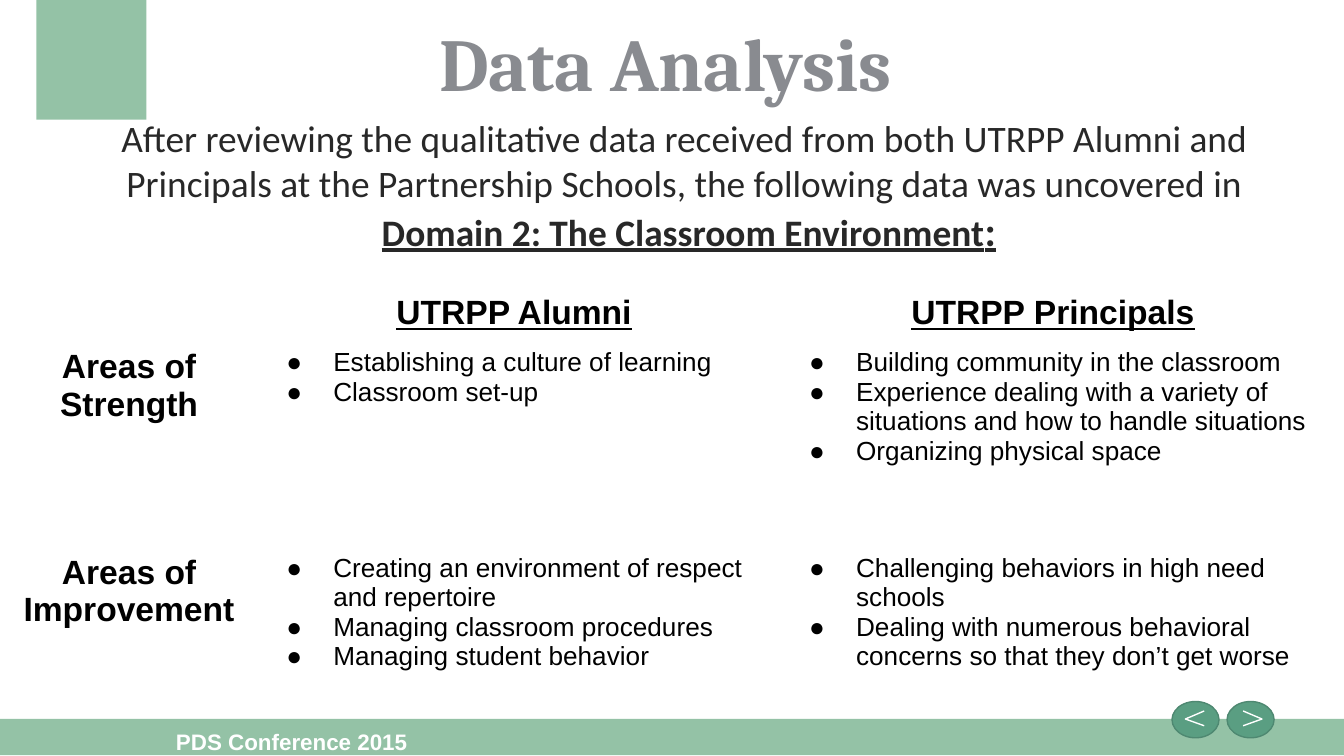
from lxml import etree
from pptx import Presentation
from pptx.dml.color import RGBColor
from pptx.enum.shapes import MSO_SHAPE
from pptx.enum.text import MSO_ANCHOR, MSO_AUTO_SIZE, PP_ALIGN
from pptx.oxml.ns import qn
from pptx.util import Inches, Pt

CENTER, LEFT = PP_ALIGN.CENTER, PP_ALIGN.LEFT
RECTANGLE, OVAL = MSO_SHAPE.RECTANGLE, MSO_SHAPE.OVAL
COLORS = {
    "band": "94C2A6", "button": "5A9E82", "button_edge": "4E8871",
    "white": "FFFFFF", "title": "898B90", "intro": "282828", "black": "000000",
}


def write(paragraph, text, size=18, font="Arial", color="black", bold=False,
          underline=False, align=LEFT, indent=None, bullet=None):
    """Add a run; indent is (left margin, first line) in inches."""
    paragraph.alignment = align
    paragraph.space_before = Pt(0)
    if indent:
        props = paragraph._p.get_or_add_pPr()
        props.set("marL", str(Inches(indent[0])))
        props.set("indent", str(Inches(indent[1])))
        if bullet:
            etree.SubElement(props, qn("a:buFont")).set("typeface", "Arial")
            etree.SubElement(props, qn("a:buChar")).set("char", bullet)
        elif props.find(qn("a:buNone")) is None:
            etree.SubElement(props, qn("a:buNone"))
    run = paragraph.add_run()
    run.text = text
    run.font.size, run.font.name = Pt(size), font
    run.font.bold, run.font.underline = bold, underline
    run.font.color.rgb = RGBColor.from_string(COLORS[color])


def add_plain(kind, left, top, width, height, fill, edge=None):
    shape = slide.shapes.add_shape(
        kind, Inches(left), Inches(top), Inches(width), Inches(height))
    shape.shadow.inherit = False
    shape.fill.solid()
    shape.fill.fore_color.rgb = RGBColor.from_string(COLORS[fill])
    if edge:
        shape.line.color.rgb = RGBColor.from_string(COLORS[edge])
        shape.line.width = Pt(0.75)
    else:
        shape.line.fill.background()


prs = Presentation()
prs.slide_width, prs.slide_height = Inches(10), Inches(10) * 9 // 16
slide = prs.slides.add_slide(prs.slide_layouts[1])

# Green corner, footer band and navigation buttons
add_plain(RECTANGLE, 0.27, 0, 0.82, 0.89, "band")
add_plain(RECTANGLE, 0, 5.35, 10, 0.27, "band")
footer = slide.shapes.add_textbox(
    Inches(1.31), Inches(5.42), Inches(3.27), Inches(0.4)).text_frame
footer.word_wrap = True
footer.margin_left = footer.margin_right = footer.margin_top = footer.margin_bottom = 0
write(footer.paragraphs[0], "PDS Conference 2015", size=12, color="white", bold=True)

for left, direction in ((8.72, -1), (9.13, 1)):
    add_plain(OVAL, left, 5.22, 0.35, 0.27, "button", "button_edge")
    middle = left + 0.18
    tip, back = Inches(middle + 0.08 * direction), Inches(middle - 0.06 * direction)
    builder = slide.shapes.build_freeform(back, Inches(5.29))
    builder.add_line_segments([(tip, Inches(5.35)), (back, Inches(5.4))], close=False)
    chevron = builder.convert_to_shape()
    chevron.shadow.inherit = False
    chevron.fill.background()
    chevron.line.color.rgb = RGBColor.from_string(COLORS["white"])
    chevron.line.width = Pt(0.75)

# Title and introduction
title, intro = slide.shapes.title, slide.placeholders[1]
for holder, top, width, height, anchor in (
        (title, 0, 9.9, 0.89, MSO_ANCHOR.BOTTOM),
        (intro, 0.76, 10.12, 4.73, MSO_ANCHOR.TOP)):
    holder.left, holder.top = Inches(0), Inches(top)
    holder.width, holder.height = Inches(width), Inches(height)
    frame = holder.text_frame
    frame.auto_size, frame.word_wrap = MSO_AUTO_SIZE.NONE, True
    frame.vertical_anchor = anchor
    frame.margin_left = frame.margin_right = Inches(0.1)
    frame.margin_top = frame.margin_bottom = Inches(0.1)

write(title.text_frame.paragraphs[0], "Data Analysis", size=40, font="Cambria",
      color="title", bold=True, align=CENTER)

intro_format = dict(font="Calibri", color="intro", align=CENTER, indent=(0.38, -0.25))
opening, continuation, domain = (
    intro.text_frame.paragraphs[0],
    intro.text_frame.add_paragraph(), intro.text_frame.add_paragraph())
write(opening, "After reviewing the qualitative data received from both UTRPP Alumni and ",
      size=20, **intro_format)
write(continuation,
      "Principals at the Partnership Schools, the following data was uncovered in ",
      size=20, **intro_format)
for text, size in (("Domain 2: The Classroom Environment", 20), (":", 22)):
    write(domain, text, size=size, bold=True, underline=True, **intro_format)

# Findings: strings are headings, lists are bulleted
findings = [
    ["", "UTRPP Alumni", "UTRPP Principals"],
    ["Areas of Strength",
     ["Establishing a culture of learning", "Classroom set-up"],
     ["Building community in the classroom",
      "Experience dealing with a variety of situations and how to handle situations",
      "Organizing physical space"]],
    ["Areas of Improvement",
     ["Creating an environment of respect and repertoire",
      "Managing classroom procedures", "Managing student behavior"],
     ["Challenging behaviors in high need schools",
      "Dealing with numerous behavioral concerns so that they don’t get worse"]],
]
table = slide.shapes.add_table(
    3, 3, Inches(0.04), Inches(2.14), Inches(9.86), Inches(3.19)).table
table.first_row = table.horz_banding = False
for column, width in zip(table.columns, (1.84, 3.89, 4.13)):
    column.width = Inches(width)
for row, height in zip(table.rows, (0.31, 1.53, 1.35)):
    row.height = Inches(height)

for r, row_content in enumerate(findings):
    for c, content in enumerate(row_content):
        cell = table.cell(r, c)
        cell.margin_left = cell.margin_right = Inches(0.1)
        cell.margin_top = cell.margin_bottom = Inches(0.05 if content else 0)
        cell_props = cell._tc.get_or_add_tcPr()
        for side in ("a:lnL", "a:lnR", "a:lnT", "a:lnB"):
            etree.SubElement(etree.SubElement(cell_props, qn(side)), qn("a:noFill"))
        cell.fill.background()
        first = cell.text_frame.paragraphs[0]
        if isinstance(content, list):
            for i, point in enumerate(content):
                paragraph = cell.text_frame.add_paragraph() if i else first
                write(paragraph, point, size=14, indent=(0.5, -0.35), bullet="●")
        elif content:
            write(first, content, bold=True, underline=r == 0, align=CENTER)

prs.save("out.pptx")
